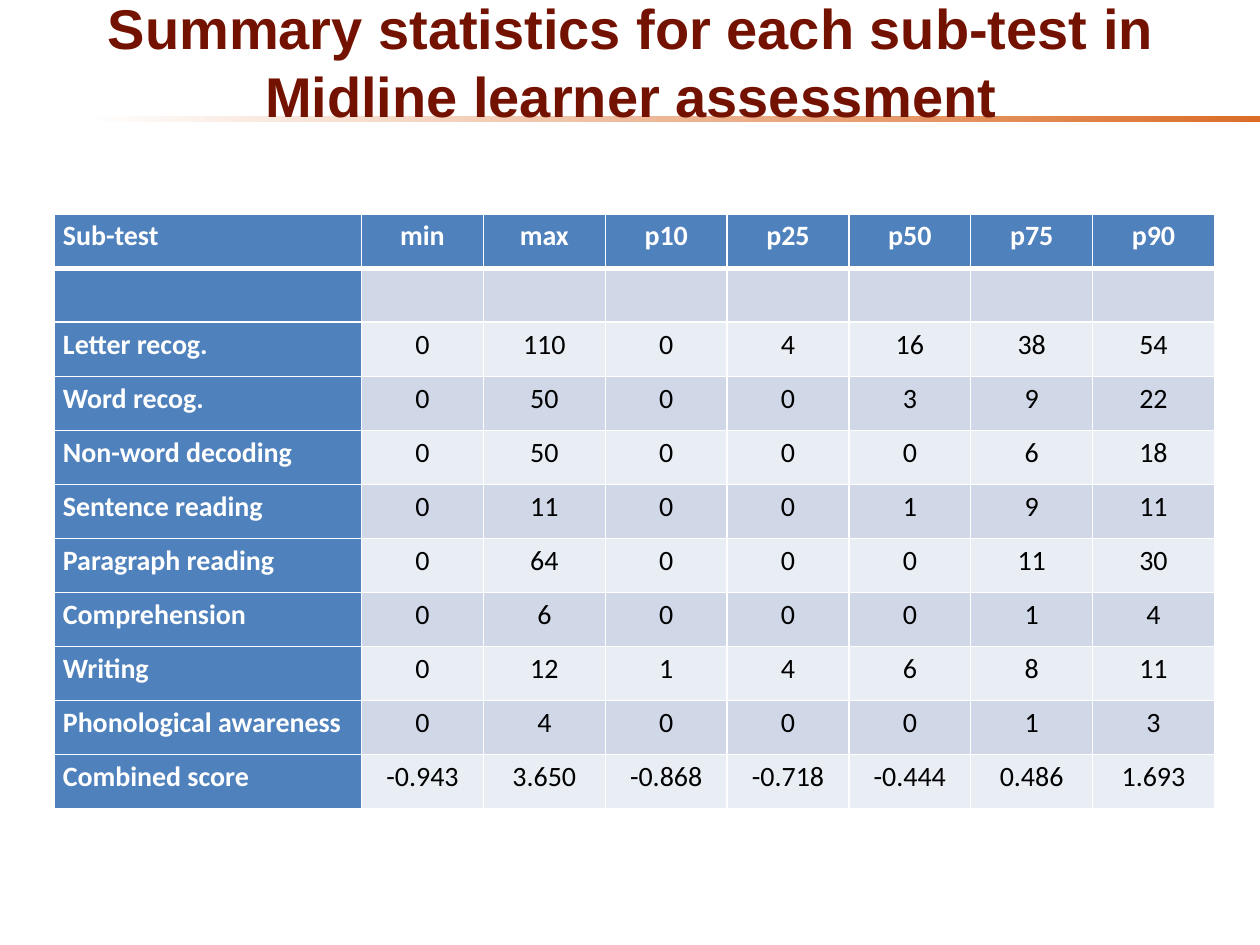
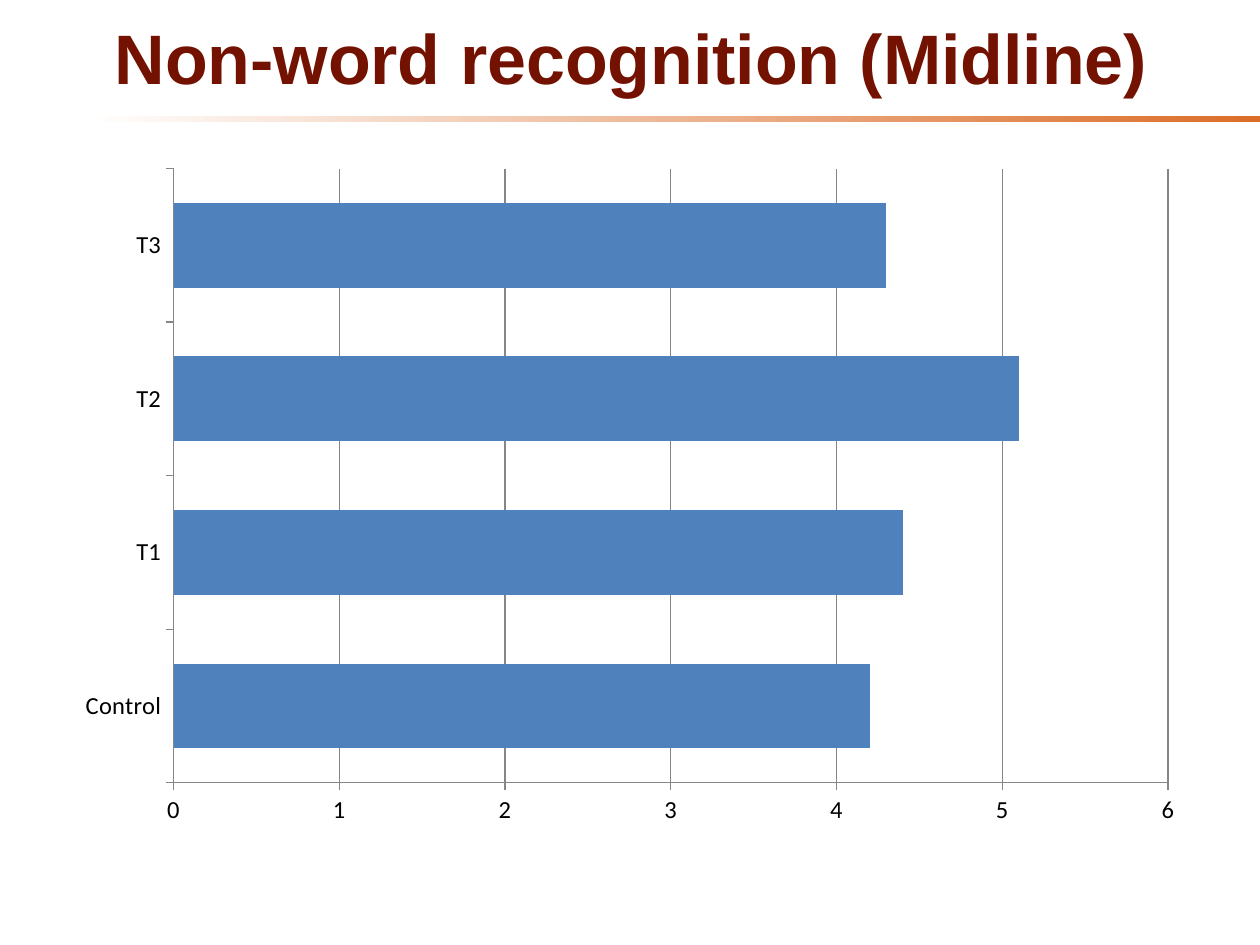
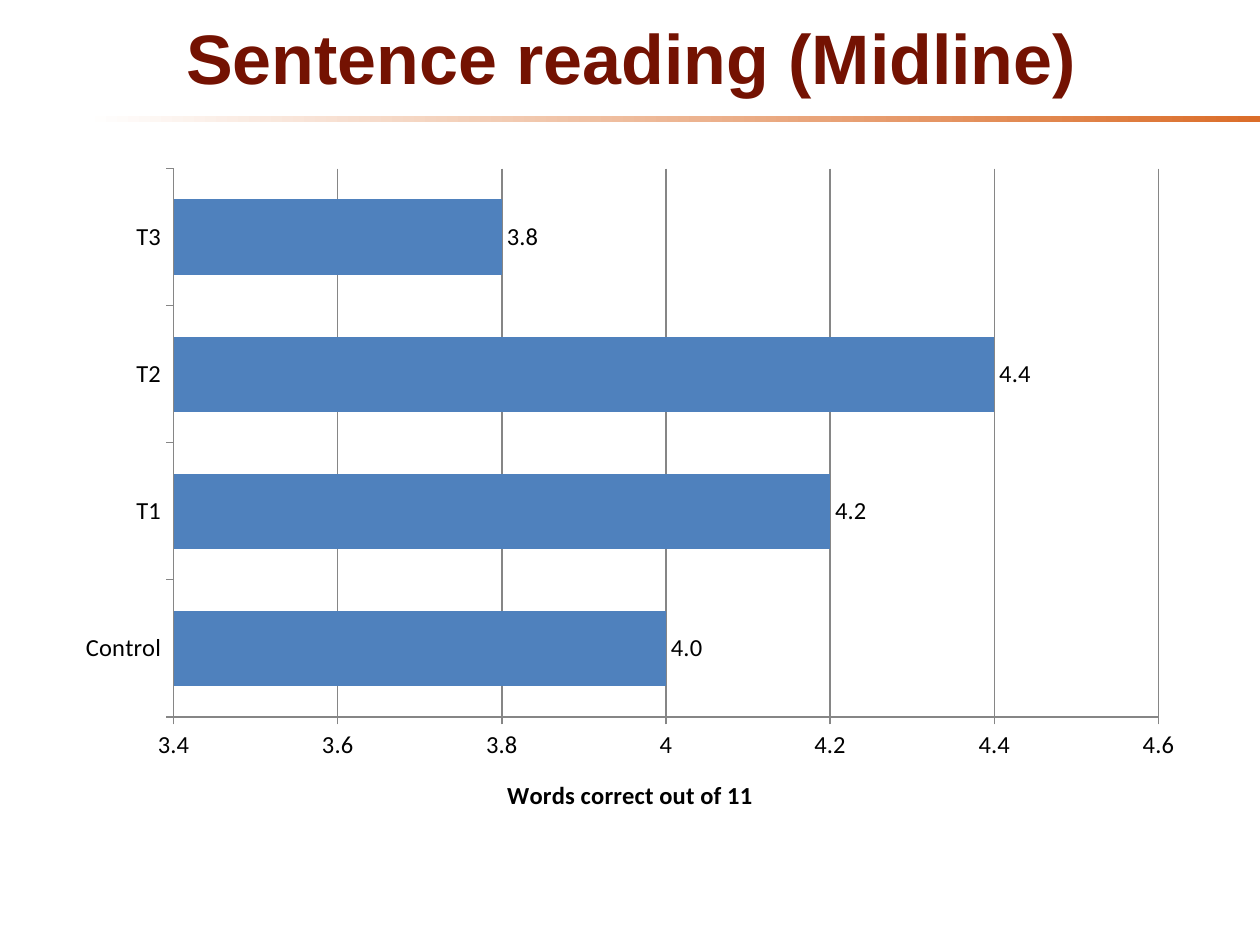
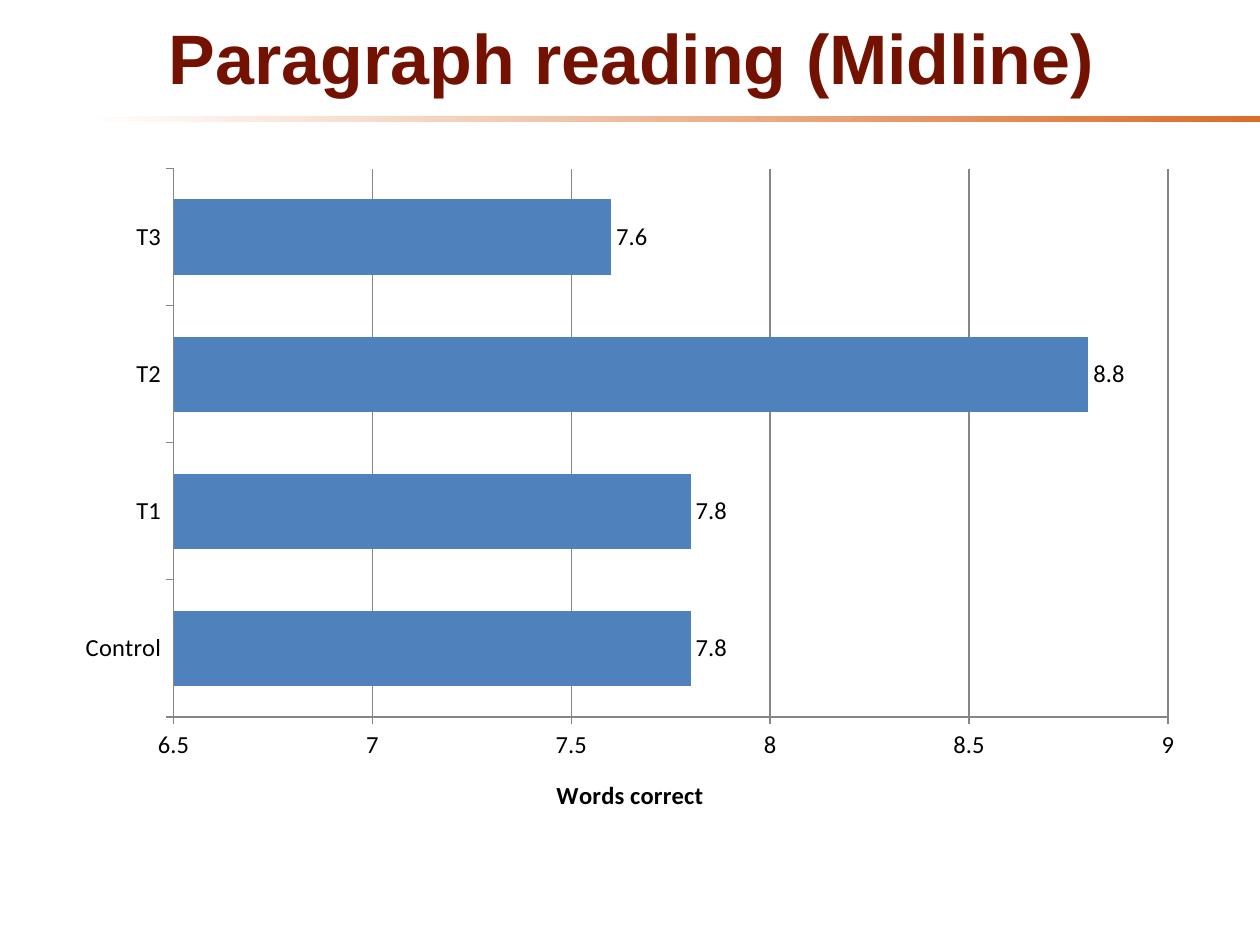
import pptx
import pptx.util
import pptx.dml.color
import pptx.chart.data
import pptx.enum.chart
import pptx.enum.shapes
import pptx.enum.text
import pptx.oxml
import pptx.oxml.ns

Inches = pptx.util.Inches
Pt = pptx.util.Pt
ALIGN = pptx.enum.text.PP_ALIGN

COLORS = {
    "title": "741202",
    "band": "DB6D29",
    "blue": "4F81BD",
    "dark": "D0D8E8",
    "light": "E9EDF4",
    "white": "FFFFFF",
    "black": "000000",
    "axis": "868686",
}

HEAD = ["Sub-test", "min", "max", "p10", "p25", "p50", "p75", "p90"]
STATS = [
    HEAD,
    [""] * len(HEAD),
    ["Letter recog.", "0", "110", "0", "4", "16", "38", "54"],
    ["Word recog.", "0", "50", "0", "0", "3", "9", "22"],
    ["Non-word decoding", "0", "50", "0", "0", "0", "6", "18"],
    ["Sentence reading", "0", "11", "0", "0", "1", "9", "11"],
    ["Paragraph reading", "0", "64", "0", "0", "0", "11", "30"],
    ["Comprehension", "0", "6", "0", "0", "0", "1", "4"],
    ["Writing", "0", "12", "1", "4", "6", "8", "11"],
    ["Phonological awareness", "0", "4", "0", "0", "0", "1", "3"],
    ["Combined score", "-0.943", "3.650", "-0.868", "-0.718", "-0.444", "0.486", "1.693"],
]
GROUPS = ["Control", "T1", "T2", "T3"]


def color(name):
    return pptx.dml.color.RGBColor.from_string(COLORS[name])


def style(font, face, size, tint, bold=False):
    font.name = face
    font.size = Pt(size)
    font.bold = bold
    font.color.rgb = color(tint)


def add_band(slide):
    band = slide.shapes.add_shape(
        pptx.enum.shapes.MSO_SHAPE.RECTANGLE,
        Inches(0.67), Inches(0.92), Inches(9.33), Inches(0.05))
    band.shadow.inherit = False
    band.line.fill.background()
    band.fill.gradient()
    band.fill.gradient_angle = 0
    for stop, tint, place in zip(band.fill.gradient_stops, ("white", "band"), (0, 1)):
        stop.color.rgb = color(tint)
        stop.position = place
    tree = slide.slide_layout.shapes._spTree
    band._element.nvSpPr.cNvPr.id = 20
    tree.insert(2, band._element)


def add_slide(deck, text, size=40, height=0.79):
    slide = deck.slides.add_slide(deck.slide_layouts[5])
    title = slide.shapes.title
    title.left, title.top = Inches(0.51), Inches(0.05)
    title.width, title.height = Inches(9), Inches(height)
    frame = title.text_frame
    frame.text = text
    frame.word_wrap = True
    frame.auto_size = pptx.enum.text.MSO_AUTO_SIZE.NONE
    frame.vertical_anchor = pptx.enum.text.MSO_ANCHOR.MIDDLE
    para = frame.paragraphs[0]
    para.alignment = ALIGN.CENTER
    style(para.runs[0].font, "Arial", size, "title", True)
    return slide


def add_edges(cell, top, bottom):
    props = cell._tc.get_or_add_tcPr()
    widths = {"lnL": 1, "lnR": 1, "lnT": top, "lnB": bottom}
    for place, (tag, width) in enumerate(widths.items()):
        edge = pptx.oxml.parse_xml(
            f'<a:{tag} {pptx.oxml.ns.nsdecls("a")} w="{Pt(width)}"><a:solidFill>'
            f'<a:srgbClr val="{COLORS["white"]}"/></a:solidFill></a:{tag}>')
        props.insert(place, edge)


def fill_cell(cell, text, row, col):
    head = row == 0 or col == 0
    cell.fill.solid()
    cell.fill.fore_color.rgb = color("blue" if head else "dark" if row % 2 else "light")
    add_edges(cell, 3 if row == 1 else 1, 3 if row == 0 else 1)
    if not text:
        return
    cell.margin_left = cell.margin_right = Inches(0.07)
    cell.margin_top = cell.margin_bottom = 0
    cell.text_frame.text = text
    para = cell.text_frame.paragraphs[0]
    para.alignment = ALIGN.CENTER if col else ALIGN.JUSTIFY
    para.line_spacing = 1.15
    style(para.runs[0].font, "Calibri", 16, "white" if head else "black", head)


def add_stats(slide, data):
    table = slide.shapes.add_table(
        len(data), len(data[0]),
        Inches(0.43), Inches(1.7), Inches(9.21), Inches(4.72)).table
    table.first_col = True
    first = 2.44
    rest = (9.21 - first) / (len(data[0]) - 1)
    for col, column in enumerate(table.columns):
        column.width = Inches(rest if col else first)
    for row, texts in enumerate(data):
        for col, text in enumerate(texts):
            fill_cell(table.cell(row, col), text, row, col)


def format_line(line):
    line.color.rgb = color("axis")
    line.width = Pt(0.75)


def add_bars(slide, values, low, high, step, label=None):
    data = pptx.chart.data.CategoryChartData()
    data.categories = GROUPS
    data.add_series("Series 1", values)
    chart = slide.shapes.add_chart(
        pptx.enum.chart.XL_CHART_TYPE.BAR_CLUSTERED,
        Inches(0.5), Inches(1.23), Inches(9), Inches(5.43), data).chart
    chart.has_legend = False
    chart.has_title = False
    style(chart.font, "Calibri", 14, "black")

    plot = chart.plots[0]
    plot.vary_by_categories = False
    plot.gap_width = 82 if label else 81
    bars = plot.series[0].format.fill
    bars.solid()
    bars.fore_color.rgb = color("blue")

    axis = chart.value_axis
    axis.minimum_scale, axis.maximum_scale, axis.major_unit = low, high, step
    axis.has_major_gridlines = True
    axis.tick_labels.number_format = "General"
    axis.tick_labels.number_format_is_linked = False
    lines = (axis.format.line, chart.category_axis.format.line,
             axis.major_gridlines.format.line)
    for line in lines:
        format_line(line)

    if label:
        frame = axis.axis_title.text_frame
        frame.text = label
        style(frame.paragraphs[0].runs[0].font, "Calibri", 14, "black", True)
        plot.has_data_labels = True
        marks = plot.data_labels
        marks.show_value = True
        marks.number_format = "#,##0.0"
        marks.number_format_is_linked = False
        marks.position = pptx.enum.chart.XL_LABEL_POSITION.OUTSIDE_END
        style(marks.font, "Calibri", 14, "black")


def main():
    deck = pptx.Presentation()
    deck.slide_width, deck.slide_height = Inches(10), Inches(7.5)

    slide = add_slide(
        deck, "Summary statistics for each sub-test in Midline learner assessment", 32, 0.87)
    add_band(slide)
    add_stats(slide, STATS)

    slide = add_slide(deck, "Non-word recognition (Midline)")
    add_bars(slide, [4.2, 4.4, 5.1, 4.3], 0, 6, 1)

    slide = add_slide(deck, "Sentence reading (Midline)")
    add_bars(slide, [4, 4.2, 4.4, 3.8], 3.4, 4.6, 0.2, "Words correct out of 11")

    slide = add_slide(deck, "Paragraph reading (Midline)")
    add_bars(slide, [7.8, 7.8, 8.8, 7.6], 6.5, 9, 0.5, "Words correct")

    deck.save("out.pptx")


if __name__ == "__main__":
    main()
